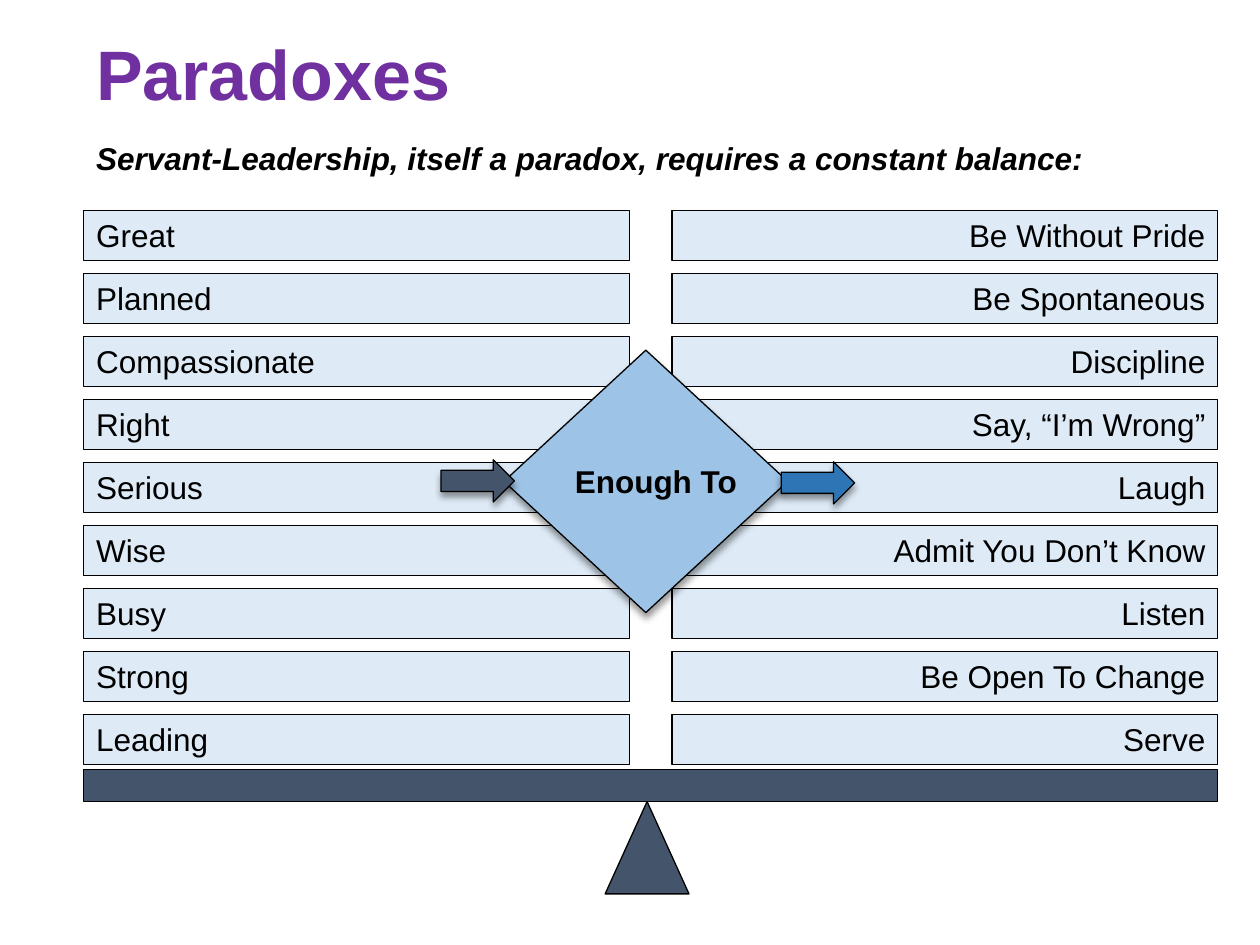
import pptx
import pptx.util
import pptx.dml.color
import pptx.enum.shapes
import pptx.enum.text
import pptx.oxml
import pptx.oxml.ns

Cm, Pt = pptx.util.Cm, pptx.util.Pt
RGB = pptx.dml.color.RGBColor
KIND = pptx.enum.shapes.MSO_SHAPE
ALIGN = pptx.enum.text.PP_ALIGN
ANCHOR = pptx.enum.text.MSO_ANCHOR

BLACK = RGB(0x00, 0x00, 0x00)
PURPLE = RGB(0x70, 0x30, 0xA0)
SLATE = RGB(0x44, 0x54, 0x6A)
PALE = RGB(0xDE, 0xEB, 0xF7)
SKY = RGB(0x9D, 0xC3, 0xE6)
BLUE = RGB(0x2E, 0x75, 0xB6)

TITLE = "Paradoxes"
INTRO = "Servant-Leadership, itself a paradox, requires a constant balance:"
HUB = "Enough To"
PAIRS = [
    ("Great", "Be Without Pride"),
    ("Planned", "Be Spontaneous"),
    ("Compassionate", "Discipline"),
    ("Right", "Say, “I’m Wrong”"),
    ("Serious", "Laugh"),
    ("Wise", "Admit You Don’t Know"),
    ("Busy", "Listen"),
    ("Strong", "Be Open To Change"),
    ("Leading", "Serve"),
]

LEFT, RIGHT = 1.69, 13.55
TOP, STEP = 4.24, 1.27
WIDE, HIGH = 11, 1.02

SHADOW = (
    '<a:effectLst %s><a:outerShdw blurRad="50800" dist="38100" dir="5400000"'
    ' algn="t" rotWithShape="0"><a:srgbClr val="000000"><a:alpha val="40000"/>'
    "</a:srgbClr></a:outerShdw></a:effectLst>" % pptx.oxml.ns.nsdecls("a")
)

deck = pptx.Presentation()
deck.slide_width, deck.slide_height = Cm(25.4), Cm(19.05)
slide = deck.slides.add_slide(deck.slide_layouts[6])


def write(shape, text, size=18, color=BLACK, bold=False, italic=False,
          align=ALIGN.LEFT, anchor=ANCHOR.TOP, wrap=True):
    frame = shape.text_frame
    frame.word_wrap = wrap
    frame.vertical_anchor = anchor
    para = frame.paragraphs[0]
    para.text = text
    para.alignment = align
    font = para.font
    font.name, font.size = "Arial", Pt(size)
    font.bold, font.italic = bold, italic
    font.color.rgb = color
    return frame


def label(box, text, **style):
    shape = slide.shapes.add_textbox(*map(Cm, box))
    return write(shape, text, **style)


def draw(kind, box, fill):
    shape = slide.shapes.add_shape(kind, *map(Cm, box))
    shape.shadow.inherit = False
    shape.fill.solid()
    shape.fill.fore_color.rgb = fill
    shape.line.color.rgb = BLACK
    shape.line.width = Pt(0.75)
    return shape


def lift(shape):
    """Give the shape a soft shadow below it."""
    props = shape._element.spPr
    props.remove(props.find(pptx.oxml.ns.qn("a:effectLst")))
    props.append(pptx.oxml.parse_xml(SHADOW))
    return shape


title = label((LEFT, 0.36, 22, 2.41), TITLE, size=40, color=PURPLE,
              bold=True, anchor=ANCHOR.MIDDLE)
title.paragraphs[0].line_spacing = 0.9
label((LEFT, 2.67, 23.28, 1.02), INTRO, bold=True, italic=True)

# The scale: pivot and beam
draw(KIND.ISOSCELES_TRIANGLE, (12.2, 16.16, 1.69, 1.86), SLATE)
draw(KIND.RECTANGLE, (LEFT, 15.52, 22.86, 0.64), SLATE)

# The weights on each side
for row, pair in enumerate(PAIRS):
    sides = (LEFT, ALIGN.LEFT), (RIGHT, ALIGN.RIGHT)
    for text, (x, align) in zip(pair, sides):
        bar = draw(KIND.RECTANGLE, (x, TOP + row * STEP, WIDE, HIGH), PALE)
        write(bar, text, align=align)

# The hub and its arrows
hub = lift(draw(KIND.DIAMOND, (10.16, 7.06, 5.72, 5.29), SKY))
frame = write(hub, HUB, bold=True, anchor=ANCHOR.MIDDLE, wrap=False)
frame.margin_left = frame.margin_right = 0
frame.margin_top = frame.margin_bottom = 0
for x, y, fill in ((8.89, 9.27, SLATE), (15.75, 9.31, BLUE)):
    lift(draw(KIND.RIGHT_ARROW, (x, y, 1.48, 0.85), fill))

deck.save("out.pptx")
